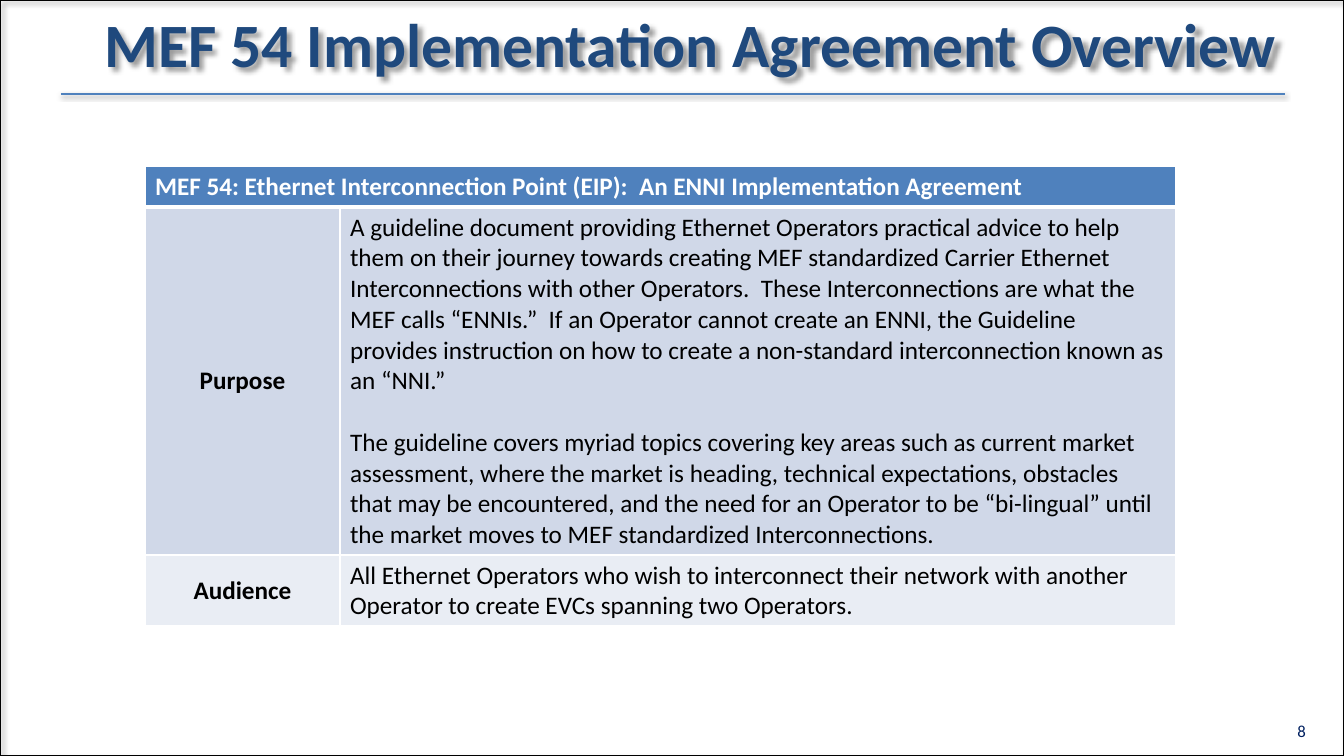
from dataclasses import dataclass

from lxml import etree
from pptx import Presentation
from pptx.dml.color import RGBColor
from pptx.enum.shapes import MSO_CONNECTOR, MSO_SHAPE
from pptx.enum.text import MSO_ANCHOR, PP_ALIGN
from pptx.oxml import parse_xml
from pptx.oxml.ns import nsdecls, qn
from pptx.util import Emu, Pt

CENTER, LEFT, RIGHT = PP_ALIGN.CENTER, PP_ALIGN.LEFT, PP_ALIGN.RIGHT
MIDDLE, TOP = MSO_ANCHOR.MIDDLE, MSO_ANCHOR.TOP
STRAIGHT, RECTANGLE = MSO_CONNECTOR.STRAIGHT, MSO_SHAPE.RECTANGLE

BLACK = RGBColor(0x00, 0x00, 0x00)
WHITE = RGBColor(0xFF, 0xFF, 0xFF)
BLUE = RGBColor(0x4F, 0x81, 0xBD)
TITLE_BLUE = RGBColor(0x1F, 0x49, 0x7D)
NUMBER_BLUE = RGBColor(0x00, 0x20, 0x60)
BAND_DARK = RGBColor(0xD0, 0xD8, 0xE8)
BAND_LIGHT = RGBColor(0xE9, 0xED, 0xF4)

FONT = "Calibri"
WIDTH, HEIGHT = 1344, 756
EMU_PER_PX = 12192000 / WIDTH
COLUMN_WIDTHS = (195, 836)
ROW_HEIGHTS = (41, 348, 71)
TABLE_LEFT, TABLE_TOP = 145, 166


@dataclass(frozen=True)
class Style:
    size: int
    color: RGBColor
    bold: bool = False
    align: PP_ALIGN = LEFT


@dataclass(frozen=True)
class Shadow:
    opacity: int
    blur: float
    distance: float
    angle: int


@dataclass(frozen=True)
class Topic:
    name: str
    paragraphs: tuple[str, ...]
    fill: RGBColor


FRAME_SHADOW = Shadow(40, 4, 3, 45)
RULE_SHADOW = Shadow(38, 3.1, 1.6, 90)
TITLE_STYLE = Style(44, TITLE_BLUE, True, CENTER)
NUMBER_STYLE = Style(12, NUMBER_BLUE, align=RIGHT)
HEADER_STYLE = Style(18, WHITE, True)
NAME_STYLE = Style(18, BLACK, True, CENTER)
BODY_STYLE = Style(18, BLACK)

TITLE = "MEF 54 Implementation Agreement Overview"
HEADER = "MEF 54: Ethernet Interconnection Point (EIP):  An ENNI Implementation Agreement"
TOPICS = (
    Topic("Purpose", (
        "A guideline document providing Ethernet Operators practical advice to help them on "
        "their journey towards creating MEF standardized Carrier Ethernet Interconnections "
        "with other Operators.  These Interconnections are what the MEF calls “ENNIs.”  If an "
        "Operator cannot create an ENNI, the Guideline provides instruction on how to create "
        "a non-standard interconnection known as an “NNI.”",
        "The guideline covers myriad topics covering key areas such as current market "
        "assessment, where the market is heading, technical expectations, obstacles that may "
        "be encountered, and the need for an Operator to be “bi-lingual” until the market "
        "moves to MEF standardized Interconnections.",
    ), BAND_DARK),
    Topic("Audience", (
        "All Ethernet Operators who wish to interconnect their network with another Operator "
        "to create EVCs spanning two Operators.",
    ), BAND_LIGHT),
)


def px(length: int) -> Emu:
    return Emu(round(length * EMU_PER_PX))


def add_shadow(shape, shadow: Shadow) -> None:
    shape._element.spPr.append(parse_xml(
        f'<a:effectLst {nsdecls("a")}><a:outerShdw blurRad="{Pt(shadow.blur)}" '
        f'dist="{Pt(shadow.distance)}" dir="{shadow.angle * 60000}" algn="tl" '
        f'rotWithShape="0"><a:srgbClr val="{BLACK}"><a:alpha val="{shadow.opacity * 1000}"/>'
        f'</a:srgbClr></a:outerShdw></a:effectLst>'))


def write(frame, paragraphs: tuple[str, ...], style: Style) -> None:
    for index, text in enumerate(paragraphs):
        para = frame.add_paragraph() if index else frame.paragraphs[0]
        para.text = text
        para.alignment = style.align
        if index:
            para.space_before = Pt(22)
        para.font.name = FONT
        para.font.size = Pt(style.size)
        para.font.bold = style.bold
        para.font.color.rgb = style.color


def add_text(page, left: int, top: int, width: int, height: int, text: str,
             style: Style, anchor: MSO_ANCHOR = TOP, wrap: bool = True):
    box = page.shapes.add_textbox(px(left), px(top), px(width), px(height))
    box.text_frame.word_wrap = wrap
    box.text_frame.vertical_anchor = anchor
    write(box.text_frame, (text,), style)
    return box


def set_borders(cell, top: int, bottom: int) -> None:
    """Draw white cell borders; top and bottom widths are in points."""
    properties = cell._tc.get_or_add_tcPr()
    for side, width in (("L", 1), ("R", 1), ("T", top), ("B", bottom)):
        line = etree.SubElement(properties, qn(f"a:ln{side}"), w=str(Pt(width)))
        fill = etree.SubElement(line, qn("a:solidFill"))
        etree.SubElement(fill, qn("a:srgbClr"), val=str(WHITE))


def fill_cell(cell, paragraphs: tuple[str, ...], style: Style, fill: RGBColor,
              anchor: MSO_ANCHOR = TOP) -> None:
    write(cell.text_frame, paragraphs, style)
    cell.vertical_anchor = anchor
    cell.fill.solid()
    cell.fill.fore_color.rgb = fill


def add_frame(page) -> None:
    frame = page.shapes.add_shape(RECTANGLE, 0, 0, px(WIDTH), px(HEIGHT))
    frame.fill.background()
    frame.line.color.rgb = BLACK
    frame.line.width = Pt(1.5)
    add_shadow(frame, FRAME_SHADOW)


def add_title(page) -> None:
    rule = page.shapes.add_connector(STRAIGHT, px(61), px(94), px(1285), px(94))
    rule.line.color.rgb = BLUE
    rule.line.width = Pt(2)
    add_shadow(rule, RULE_SHADOW)
    box = add_text(page, 0, 0, WIDTH, 85, TITLE, TITLE_STYLE, MIDDLE)
    box.text_frame.paragraphs[0]._p.get_or_add_pPr().set("marL", str(px(38)))
    add_shadow(box, FRAME_SHADOW)


def add_topics(page) -> None:
    table = page.shapes.add_table(
        len(ROW_HEIGHTS), len(COLUMN_WIDTHS), px(TABLE_LEFT), px(TABLE_TOP),
        px(sum(COLUMN_WIDTHS)), px(sum(ROW_HEIGHTS))).table
    for column, width in zip(table.columns, COLUMN_WIDTHS):
        column.width = px(width)
    for index, (row, height) in enumerate(zip(table.rows, ROW_HEIGHTS)):
        row.height = px(height)
        for cell in row.cells:
            set_borders(cell, 3 if index == 1 else 1, 3 if index == 0 else 1)
    table.cell(0, 0).merge(table.cell(0, 1))
    fill_cell(table.cell(0, 0), (HEADER,), HEADER_STYLE, BLUE)
    for index, topic in enumerate(TOPICS, start=1):
        fill_cell(table.cell(index, 0), (topic.name,), NAME_STYLE, topic.fill, MIDDLE)
        fill_cell(table.cell(index, 1), topic.paragraphs, BODY_STYLE, topic.fill)


def main() -> None:
    deck = Presentation()
    deck.slide_width, deck.slide_height = px(WIDTH), px(HEIGHT)
    page = deck.slides.add_slide(deck.slide_layouts[6])
    add_frame(page)
    add_text(page, 1276, 716, 40, 30, "8", NUMBER_STYLE, wrap=False)
    add_title(page)
    add_topics(page)
    deck.save("out.pptx")


if __name__ == "__main__":
    main()
